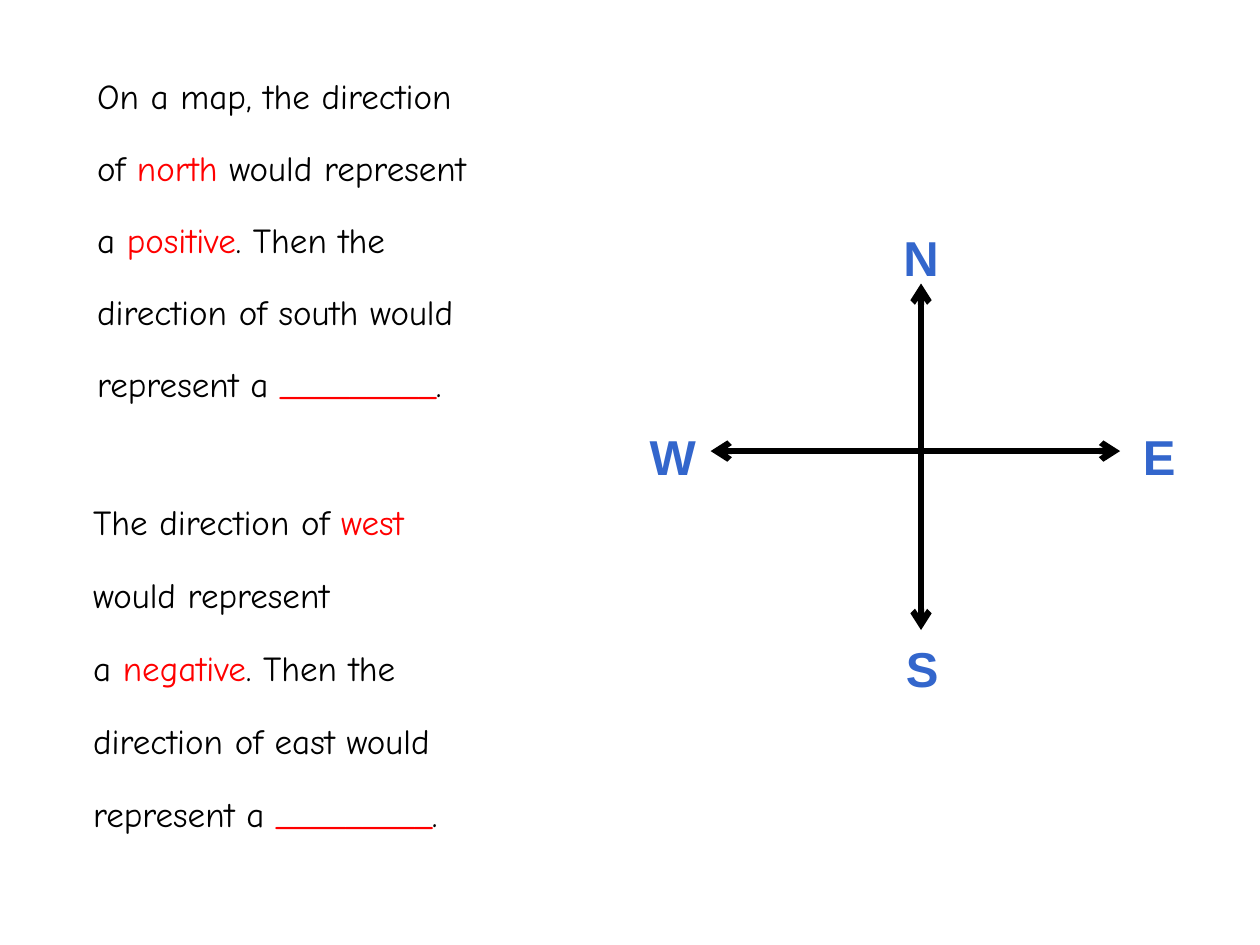
import pptx
import pptx.dml.color
import pptx.enum.shapes
import pptx.enum.text
import pptx.oxml.ns
import pptx.util
from lxml import etree

BLACK, RED, BLUE = "000000", "FF0000", "3366CC"

NORTH_SOUTH = [
    [("On a map, the direction", BLACK)],
    [("of ", BLACK), ("north", RED), (" would represent", BLACK)],
    [("a ", BLACK), ("positive", RED), (". Then the", BLACK)],
    [("direction of south would", BLACK)],
    [("represent a ", BLACK), ("_________", RED), (".", BLACK)],
]
WEST_EAST = [
    [("The direction of ", BLACK), ("west", RED)],
    [("would represent", BLACK)],
    [("a ", BLACK), ("negative", RED), (". Then the", BLACK)],
    [("direction of east would", BLACK)],
    [("represent a ", BLACK), ("_________", RED), (".", BLACK)],
]
ARROWS = [((7.31, 2.25), (7.31, 5)), ((8.89, 3.58), (5.64, 3.58))]
LETTER_HEIGHT = 0.57
LETTERS = [
    ("N", 7.31, 2.04, 0.49),
    ("S", 7.32, 5.3, 0.46),
    ("E", 9.2, 3.62, 0.46),
    ("W", 5.34, 3.62, 0.57),
]


def color(value):
    return pptx.dml.color.RGBColor.from_string(value)


def place(shape, left, top, width, height):
    shape.left, shape.top, shape.width, shape.height = map(
        pptx.util.Inches, (left, top, width, height))


def add_text(paragraph, text, font="Comic Neue", size=20, fill=BLACK, bold=False):
    run = paragraph.add_run()
    run.text = text
    run.font.name = font
    run.font.size = pptx.util.Pt(size)
    run.font.bold = bold
    run.font.color.rgb = color(fill)


def write_lines(shape, lines, indent, before, spacing):
    frame = shape.text_frame
    frame.word_wrap = True
    frame.auto_size = pptx.enum.text.MSO_AUTO_SIZE.NONE
    frame.vertical_anchor = pptx.enum.text.MSO_ANCHOR.TOP
    for number, line in enumerate(lines):
        paragraph = frame.add_paragraph() if number else frame.paragraphs[0]
        paragraph.line_spacing = spacing
        paragraph.space_before = pptx.util.Pt(before)
        paragraph.space_after = pptx.util.Pt(12)
        properties = paragraph._p.get_or_add_pPr()
        properties.set("marL", str(pptx.util.Inches(indent)))
        properties.set("indent", str(-pptx.util.Inches(indent)))
        etree.SubElement(properties, pptx.oxml.ns.qn("a:buNone"))
        for text, fill in line:
            add_text(paragraph, text, fill=fill)


def add_arrow(slide, start, end):
    connector = slide.shapes.add_connector(
        pptx.enum.shapes.MSO_CONNECTOR.STRAIGHT, *map(pptx.util.Inches, start + end))
    connector.line.color.rgb = color(BLACK)
    connector.line.width = pptx.util.Pt(3.5)
    line = connector.line._get_or_add_ln()
    for tag in ("a:headEnd", "a:tailEnd"):
        etree.SubElement(line, pptx.oxml.ns.qn(tag), type="arrow")
    etree.SubElement(connector._element.spPr, pptx.oxml.ns.qn("a:effectLst"))


def add_letter(slide, letter, center, middle, width):
    shape = slide.shapes.add_textbox(0, 0, 0, 0)
    place(shape, center - width / 2, middle - LETTER_HEIGHT / 2, width, LETTER_HEIGHT)
    frame = shape.text_frame
    frame.word_wrap = False
    frame.auto_size = pptx.enum.text.MSO_AUTO_SIZE.SHAPE_TO_FIT_TEXT
    paragraph = frame.paragraphs[0]
    paragraph.alignment = pptx.enum.text.PP_ALIGN.CENTER
    add_text(paragraph, letter, font="Arial", size=28, fill=BLUE, bold=True)


def main():
    presentation = pptx.Presentation()
    presentation.slide_width = pptx.util.Inches(10)
    presentation.slide_height = pptx.util.Inches(7.5)
    slide = presentation.slides.add_slide(presentation.slide_layouts[1])
    title = slide.shapes.title._element
    title.getparent().remove(title)

    body = slide.placeholders[1]
    place(body, 0.67, 0.58, 5, 4)
    write_lines(body, NORTH_SOUTH, indent=0.29, before=7.5, spacing=0.9)
    for start, end in ARROWS:
        add_arrow(slide, start, end)
    second_text = slide.shapes.add_textbox(0, 0, 0, 0)
    place(second_text, 0.64, 3.92, 5, 3.17)
    write_lines(second_text, WEST_EAST, indent=0.3, before=5.8, spacing=1.0)
    for letter in LETTERS:
        add_letter(slide, *letter)
    presentation.save("out.pptx")


if __name__ == "__main__":
    main()
